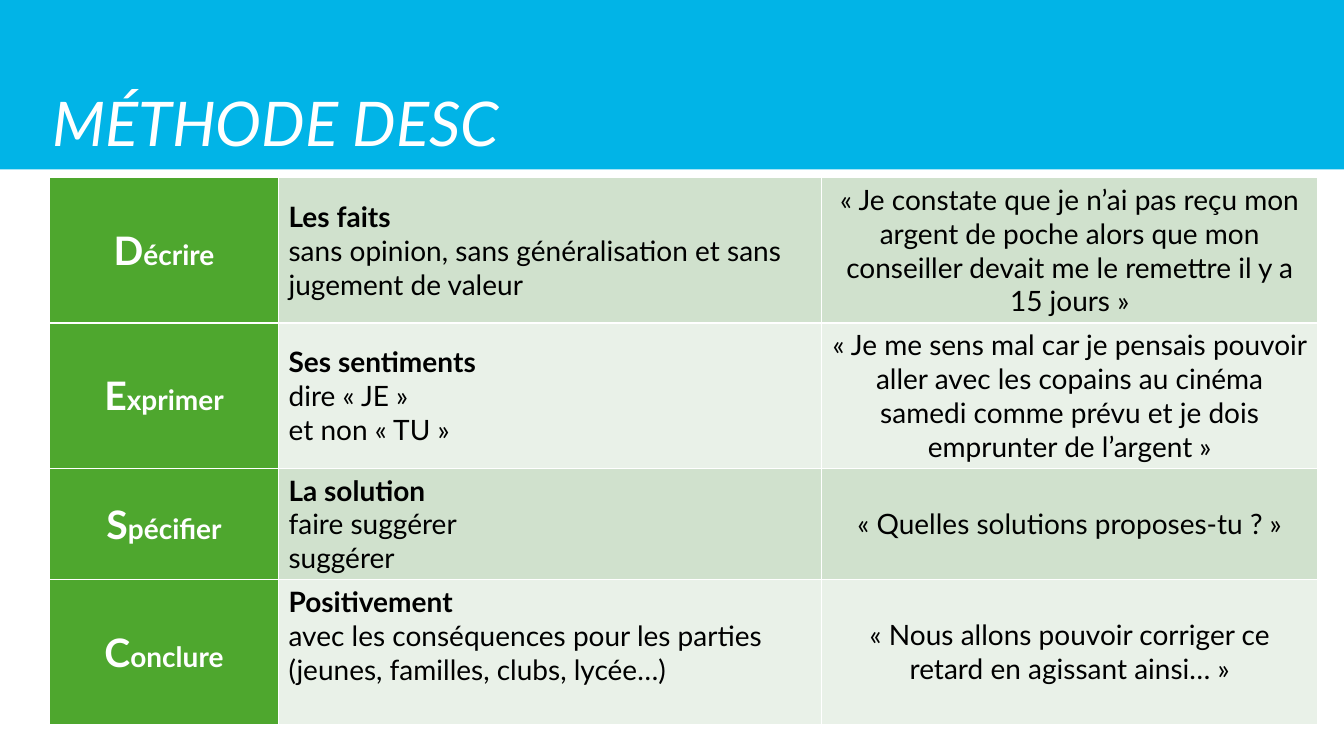
"""Build the slide that presents the DESC method as a table."""
import pptx
import pptx.dml.color
import pptx.enum.shapes
import pptx.enum.text
import pptx.oxml
import pptx.oxml.ns
import pptx.util

Cm = pptx.util.Cm
Pt = pptx.util.Pt
ANCHOR = pptx.enum.text.MSO_ANCHOR
ALIGN = pptx.enum.text.PP_ALIGN

WIDTH, HEIGHT, BAND_HEIGHT = 33.87, 19.05, 4.27
BLUE, GREEN, WHITE, BLACK = "01B4E7", "4EA72E", "FFFFFF", "000000"
ROW_FILLS = ["D0E1CD", "E9F1E8"]
COLUMN_WIDTHS = [5.77, 13.69, 12.5]
ROW_HEIGHTS = [3.64, 3.66, 2.81, 3.64]

STEPS = [
    ("Décrire",
     ["Les faits", "sans opinion, sans généralisation et sans jugement de valeur"],
     "« Je constate que je n’ai pas reçu mon argent de poche alors que mon "
     "conseiller devait me le remettre il y a 15 jours »"),
    ("Exprimer",
     ["Ses sentiments", "dire « JE »", "et non « TU »"],
     "« Je me sens mal car je pensais pouvoir aller avec les copains au cinéma "
     "samedi comme prévu et je dois emprunter de l’argent »"),
    ("Spécifier",
     ["La solution", "faire suggérer", "suggérer"],
     "« Quelles solutions proposes-tu ? »"),
    ("Conclure",
     ["Positivement", "avec les conséquences pour les parties",
      "(jeunes, familles, clubs, lycée…)"],
     "« Nous allons pouvoir corriger ce retard en agissant ainsi… »"),
]


def color(value):
    return pptx.dml.color.RGBColor.from_string(value)


class SlideBuilder:
    font = "Lato"

    def __init__(self, presentation):
        self.slide = presentation.slides.add_slide(presentation.slide_layouts[5])

    def style(self, run, size, fill, bold=False, italic=False):
        run.font.name = self.font
        run.font.size = Pt(size)
        run.font.color.rgb = color(fill)
        run.font.bold = bold
        run.font.italic = italic

    def title(self, text):
        title = self.slide.shapes.title
        title.left, title.top = Cm(1.07), Cm(0)
        title.width, title.height = Cm(31.95), Cm(BAND_HEIGHT)
        frame = title.text_frame
        frame.text = text
        frame.auto_size = pptx.enum.text.MSO_AUTO_SIZE.NONE
        frame.vertical_anchor = ANCHOR.BOTTOM
        frame.margin_left = frame.margin_right = frame.margin_bottom = Cm(0.25)
        frame.margin_top = 0
        paragraph = frame.paragraphs[0]
        paragraph.alignment = ALIGN.LEFT
        paragraph.line_spacing = 0.9
        self.style(paragraph.runs[0], 44, WHITE, italic=True)

    def band(self):
        band = self.slide.shapes.add_shape(
            pptx.enum.shapes.MSO_SHAPE.RECTANGLE, 0, 0, Cm(WIDTH), Cm(BAND_HEIGHT))
        band.shadow.inherit = False
        band.fill.solid()
        band.fill.fore_color.rgb = color(BLUE)
        band.line.fill.background()
        self.slide.shapes.title.element.addprevious(band.element)

    def table(self, left, top):
        table = self.slide.shapes.add_table(
            len(ROW_HEIGHTS), len(COLUMN_WIDTHS), Cm(left), Cm(top),
            Cm(sum(COLUMN_WIDTHS)), Cm(sum(ROW_HEIGHTS))).table
        table.first_row = table.horz_banding = False
        for column, width in zip(table.columns, COLUMN_WIDTHS):
            column.width = Cm(width)
        for row, height in zip(table.rows, ROW_HEIGHTS):
            row.height = Cm(height)
        return table

    def cell(self, cell, fill, lines, alignment, anchor=ANCHOR.MIDDLE):
        cell.fill.solid()
        cell.fill.fore_color.rgb = color(fill)
        cell.vertical_anchor = anchor
        cell.text_frame.text = "\n".join(lines)
        for paragraph in cell.text_frame.paragraphs:
            paragraph.alignment = alignment
            self.style(paragraph.runs[0], 20, BLACK)
        self.borders(cell)
        return cell.text_frame.paragraphs[0]

    def borders(self, cell):
        properties = cell._tc.get_or_add_tcPr()
        namespace = pptx.oxml.ns.nsdecls("a")
        for index, side in enumerate(["lnL", "lnR", "lnT", "lnB"]):
            properties.insert(index, pptx.oxml.parse_xml(
                f'<a:{side} {namespace} w="{Pt(1)}"><a:solidFill>'
                f'<a:srgbClr val="{WHITE}"/></a:solidFill></a:{side}>'))

    def step_cell(self, cell, word):
        paragraph = self.cell(cell, GREEN, [word[0]], ALIGN.CENTER)
        ending = paragraph.add_run()
        ending.text = word[1:]
        self.style(paragraph.runs[0], 28, WHITE, bold=True)
        self.style(ending, 20, WHITE, bold=True)


def main():
    presentation = pptx.Presentation()
    presentation.slide_width, presentation.slide_height = Cm(WIDTH), Cm(HEIGHT)
    builder = SlideBuilder(presentation)
    builder.title("MÉTHODE DESC")
    builder.band()
    table = builder.table(1.25, 4.48)
    for index, (word, advice, example) in enumerate(STEPS):
        fill = ROW_FILLS[index % 2]
        anchor = ANCHOR.TOP if word == "Conclure" else ANCHOR.MIDDLE
        builder.step_cell(table.cell(index, 0), word)
        heading = builder.cell(table.cell(index, 1), fill, advice, ALIGN.LEFT, anchor)
        heading.runs[0].font.bold = True
        builder.cell(table.cell(index, 2), fill, [example], ALIGN.CENTER)
    presentation.save("out.pptx")


if __name__ == "__main__":
    main()
